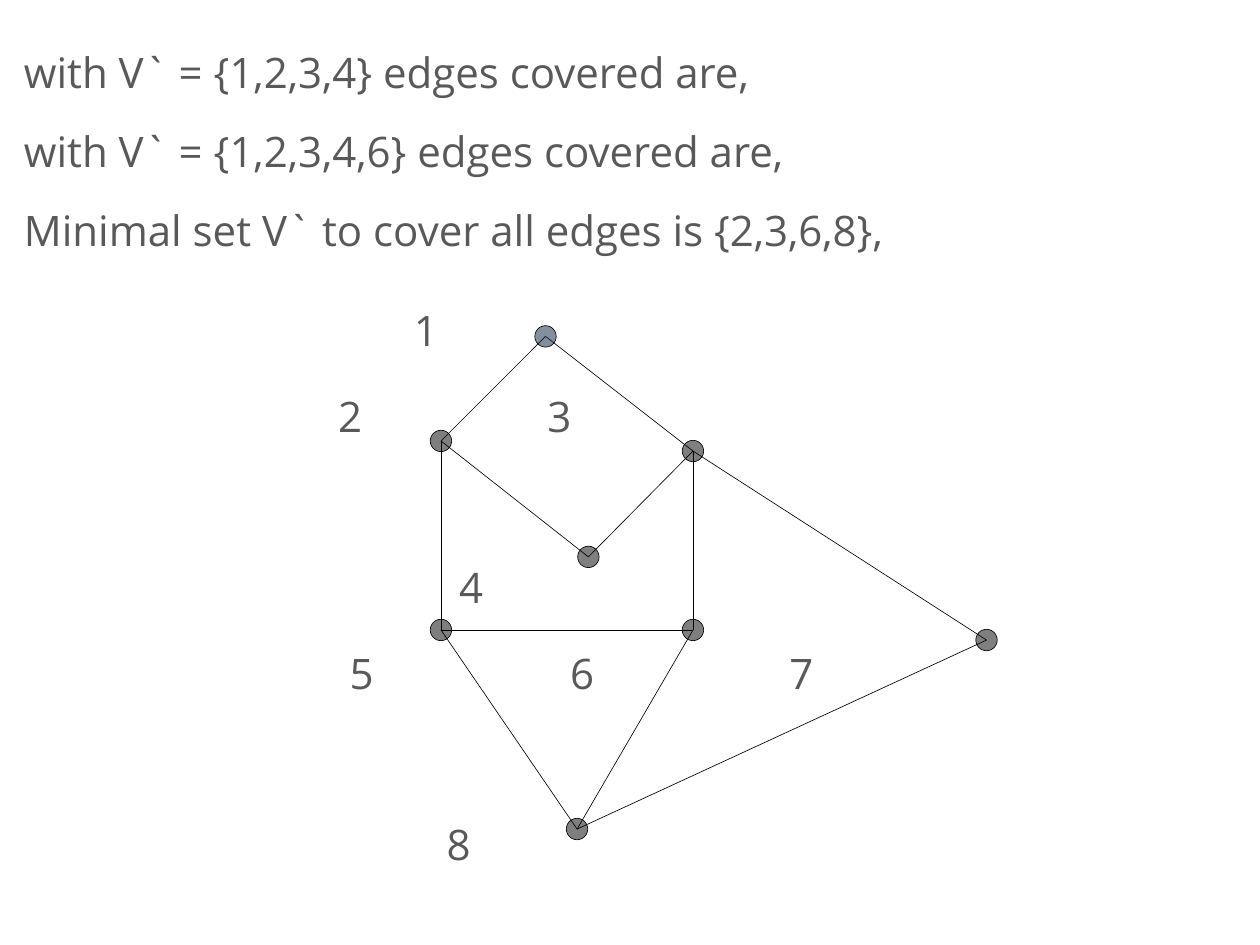
import pptx
import pptx.util
import pptx.dml.color
import pptx.enum.shapes
import pptx.enum.text
import pptx.oxml
import pptx.oxml.ns

Inches = pptx.util.Inches
Pt = pptx.util.Pt

STATEMENTS = [
    "with V` = {1,2,3,4} edges covered are,",
    "with V` = {1,2,3,4,6} edges covered are,",
    "Minimal set V` to cover all edges is {2,3,6,8},",
]
VERTICES = {
    "top": (4.33, 2.67),
    "inner": (4.67, 4.42),
    "far right": (7.83, 5.08),
    "bottom": (4.58, 6.58),
    "lower right": (5.5, 5),
    "lower left": (3.5, 5),
    "upper left": (3.5, 3.5),
    "upper right": (5.5, 3.58),
}
EDGES = [
    ("lower left", "lower right"),
    ("lower left", "bottom"),
    ("bottom", "lower right"),
    ("lower left", "upper left"),
    ("lower right", "upper right"),
    ("inner", "upper right"),
    ("upper left", "top"),
    ("inner", "upper left"),
    ("upper right", "top"),
    ("upper right", "far right"),
    ("far right", "bottom"),
]
# Each label: text, horizontal centre, text row
LABELS = [
    ("1", 3.38, 3), ("2", 2.78, 4), ("3", 4.44, 4), ("4", 3.74, 6),
    ("5", 2.87, 7), ("6", 4.62, 7), ("7", 6.36, 7), ("8", 3.64, 9),
]
FIRST_ROW, ROW_PITCH = 0.58, 0.68
DIAMETER = 0.17
LINE_WIDTH = 0.37


def rgb(value):
    """Return the colour for a hex string."""
    return pptx.dml.color.RGBColor.from_string(value)


def add_run(p, text):
    """Add a run in the slide's text style."""
    r = p.add_run()
    r.text = text
    r.font.name = "Open Sans"
    r.font.size = Pt(24)
    r.font.color.rgb = rgb("595959")


def fill_body(s):
    """Write the statements in the body placeholder."""
    sp = s.placeholders[1]
    sp.left, sp.top = Inches(0), Inches(0.32)
    sp.width, sp.height = Inches(9.33), Inches(6.75)
    tf = sp.text_frame
    tf.auto_size = pptx.enum.text.MSO_AUTO_SIZE.NONE
    tf.margin_left = Inches(0.19)
    for i, text in enumerate(STATEMENTS):
        p = tf.add_paragraph() if i else tf.paragraphs[0]
        p.space_before = Pt(16.25)
        pPr = p._p.get_or_add_pPr()
        pPr.set("marL", "0")
        pPr.set("indent", "0")
        pptx.oxml.ns.qn("a:buNone")
        pPr.append(pptx.oxml.parse_xml(
            f'<a:buNone {pptx.oxml.ns.nsdecls("a")}/>'))
        add_run(p, text)


def add_edge(s, start, end):
    """Draw a thin line between two vertex centres."""
    sp = s.shapes.add_connector(
        pptx.enum.shapes.MSO_CONNECTOR.STRAIGHT,
        *(Inches(v) for v in start + end))
    sp.line.color.rgb = rgb("000000")
    sp.line.width = Pt(LINE_WIDTH)
    sp._element.spPr.append(pptx.oxml.parse_xml(
        f'<a:effectLst {pptx.oxml.ns.nsdecls("a")}/>'))


def add_vertex(s, centre, color):
    """Draw a half-transparent dot around a centre."""
    x, y = centre
    sp = s.shapes.add_shape(
        pptx.enum.shapes.MSO_SHAPE.OVAL,
        Inches(x - DIAMETER / 2), Inches(y - DIAMETER / 2),
        Inches(DIAMETER), Inches(DIAMETER))
    sp.shadow.inherit = False
    sp.fill.solid()
    sp.fill.fore_color.rgb = rgb(color)
    clr = sp._element.spPr.find(".//" + pptx.oxml.ns.qn("a:srgbClr"))
    clr.append(pptx.oxml.parse_xml(
        f'<a:alpha {pptx.oxml.ns.nsdecls("a")} val="50000"/>'))
    sp.line.color.rgb = rgb("000000")
    sp.line.width = Pt(LINE_WIDTH)


def add_label(s, text, x, row):
    """Write a vertex number centred on x in a text row."""
    y = FIRST_ROW + row * ROW_PITCH
    sp = s.shapes.add_textbox(
        Inches(x - 0.2), Inches(y - 0.28), Inches(0.4), Inches(0.56))
    tf = sp.text_frame
    tf.word_wrap = True
    tf.vertical_anchor = pptx.enum.text.MSO_ANCHOR.MIDDLE
    p = tf.paragraphs[0]
    p.alignment = pptx.enum.text.PP_ALIGN.CENTER
    add_run(p, text)


def main():
    """Build the vertex cover slide."""
    prs = pptx.Presentation()
    prs.slide_width, prs.slide_height = Inches(10), Inches(7.5)
    s = prs.slides.add_slide(prs.slide_layouts[1])
    title = s.shapes.title._element
    title.getparent().remove(title)
    fill_body(s)
    for start, end in EDGES:
        add_edge(s, VERTICES[start], VERTICES[end])
    for name, centre in VERTICES.items():
        add_vertex(s, centre, "09213B" if name == "top" else "000000")
    for text, x, row in LABELS:
        add_label(s, text, x, row)
    prs.save("out.pptx")


if __name__ == "__main__":
    main()
